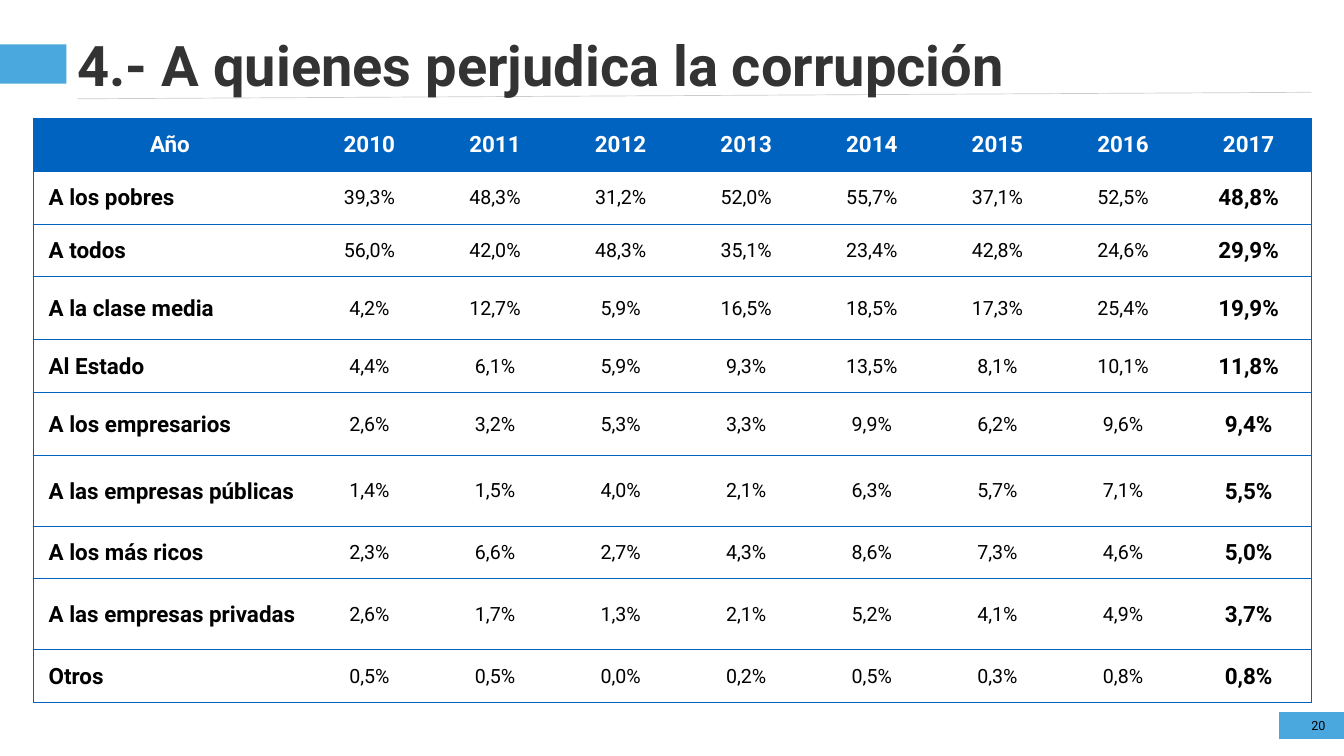
from lxml import etree
from pptx import Presentation
from pptx.dml.color import RGBColor
from pptx.enum import shapes, text
from pptx.oxml import ns
from pptx.util import Cm, Pt

BLUE = RGBColor(0x00, 0x63, 0xBF)
SKY = RGBColor(0x4B, 0xA8, 0xDF)
GRAY = RGBColor(0xCB, 0xCB, 0xCB)
DARK = RGBColor(0x33, 0x33, 0x33)
BLACK = RGBColor(0x00, 0x00, 0x00)
WHITE = RGBColor(0xFF, 0xFF, 0xFF)

ROWS = [
    ("Año", "2010 2011 2012 2013 2014 2015 2016 2017", 2.67),
    ("A los pobres", "39,3% 48,3% 31,2% 52,0% 55,7% 37,1% 52,5% 48,8%", 2.67),
    ("A todos", "56,0% 42,0% 48,3% 35,1% 23,4% 42,8% 24,6% 29,9%", 2.66),
    ("A la clase media", "4,2% 12,7% 5,9% 16,5% 18,5% 17,3% 25,4% 19,9%", 3.16),
    ("Al Estado", "4,4% 6,1% 5,9% 9,3% 13,5% 8,1% 10,1% 11,8%", 2.66),
    ("A los empresarios", "2,6% 3,2% 5,3% 3,3% 9,9% 6,2% 9,6% 9,4%", 3.18),
    ("A las empresas públicas", "1,4% 1,5% 4,0% 2,1% 6,3% 5,7% 7,1% 5,5%", 3.56),
    ("A los más ricos", "2,3% 6,6% 2,7% 4,3% 8,6% 7,3% 4,6% 5,0%", 2.66),
    ("A las empresas privadas", "2,6% 1,7% 1,3% 2,1% 5,2% 4,1% 4,9% 3,7%", 3.56),
    ("Otros", "0,5% 0,5% 0,0% 0,2% 0,5% 0,3% 0,8% 0,8%", 2.66),
]
COLUMN_WIDTHS = [13.77] + [6.33] * 8


def format_runs(paragraph, size, color, bold):
    for run in paragraph.runs:
        run.font.name = "Roboto"
        run.font.size = Pt(size)
        run.font.bold = bold
        run.font.color.rgb = color


def add_border(cell, tag, visible):
    line = etree.SubElement(cell._tc.get_or_add_tcPr(), ns.qn(tag), w=str(Pt(0.75)))
    if visible:
        fill = etree.SubElement(line, ns.qn("a:solidFill"))
        etree.SubElement(fill, ns.qn("a:srgbClr"), val=str(BLUE))
    else:
        etree.SubElement(line, ns.qn("a:noFill"))


presentation = Presentation()
presentation.slide_width = Cm(67.73)
presentation.slide_height = Cm(38.1)
slide = presentation.slides.add_slide(presentation.slide_layouts[6])

for left, top, width, height in [(0, 2.24, 3.35, 1.98), (64.46, 35.89, 3.35, 1.35)]:
    shape = slide.shapes.add_shape(
        shapes.MSO_SHAPE.RECTANGLE, Cm(left), Cm(top), Cm(width), Cm(height))
    shape.shadow.inherit = False
    shape.fill.solid()
    shape.fill.fore_color.rgb = SKY
    shape.line.fill.background()

rule = slide.shapes.add_connector(
    shapes.MSO_CONNECTOR.STRAIGHT, Cm(3.91), Cm(4.98), Cm(66.09), Cm(4.65))
rule.line.color.rgb = GRAY
rule.line.width = Pt(1)
etree.SubElement(rule._element.spPr, ns.qn("a:effectLst"))

LABELS = [
    ("4.- A quienes perjudica la corrupción", (3.91, 1.52, 63.09, 3.43),
     80, DARK, True, text.PP_ALIGN.LEFT),
    ("20", (65.3, 36.17, 1.5, 0.76), 18, BLACK, False, text.PP_ALIGN.RIGHT),
]
for words, box, size, color, bold, alignment in LABELS:
    label = slide.shapes.add_textbox(*[Cm(length) for length in box])
    frame = label.text_frame
    frame.margin_left = frame.margin_right = frame.margin_top = frame.margin_bottom = 0
    frame.vertical_anchor = text.MSO_ANCHOR.MIDDLE
    frame.word_wrap = True
    frame.text = words
    paragraph = frame.paragraphs[0]
    paragraph.alignment = alignment
    format_runs(paragraph, size, color, bold)

table = slide.shapes.add_table(
    len(ROWS), len(COLUMN_WIDTHS), Cm(1.68), Cm(5.94),
    Cm(sum(COLUMN_WIDTHS)), Cm(sum(row[2] for row in ROWS))).table
table.horz_banding = False
for column, width in zip(table.columns, COLUMN_WIDTHS):
    column.width = Cm(width)

last = len(COLUMN_WIDTHS) - 1
for row_index, (name, values, height) in enumerate(ROWS):
    table.rows[row_index].height = Cm(height)
    header = row_index == 0
    for column_index, words in enumerate([name] + values.split()):
        cell = table.cell(row_index, column_index)
        cell.margin_left = cell.margin_right = Cm(0.13)
        cell.margin_top = cell.margin_bottom = 0
        cell.vertical_anchor = text.MSO_ANCHOR.MIDDLE
        add_border(cell, "a:lnL", column_index == 0)
        add_border(cell, "a:lnR", column_index == last)
        add_border(cell, "a:lnT", True)
        add_border(cell, "a:lnB", True)
        cell.fill.solid()
        cell.fill.fore_color.rgb = BLUE if header else WHITE

        cell.text_frame.text = words
        paragraph = cell.text_frame.paragraphs[0]
        paragraph.line_spacing = 1.07
        if column_index == 0 and not header:
            paragraph.level = 1
            properties = paragraph._p.get_or_add_pPr()
            properties.set("marL", "0")
            properties.set("indent", str(Cm(0.64)))
            paragraph.alignment = text.PP_ALIGN.LEFT
        else:
            paragraph.alignment = text.PP_ALIGN.CENTER
        strong = header or column_index in (0, last)
        format_runs(paragraph, 32 if strong else 28, WHITE if header else BLACK, strong)

presentation.save("out.pptx")
